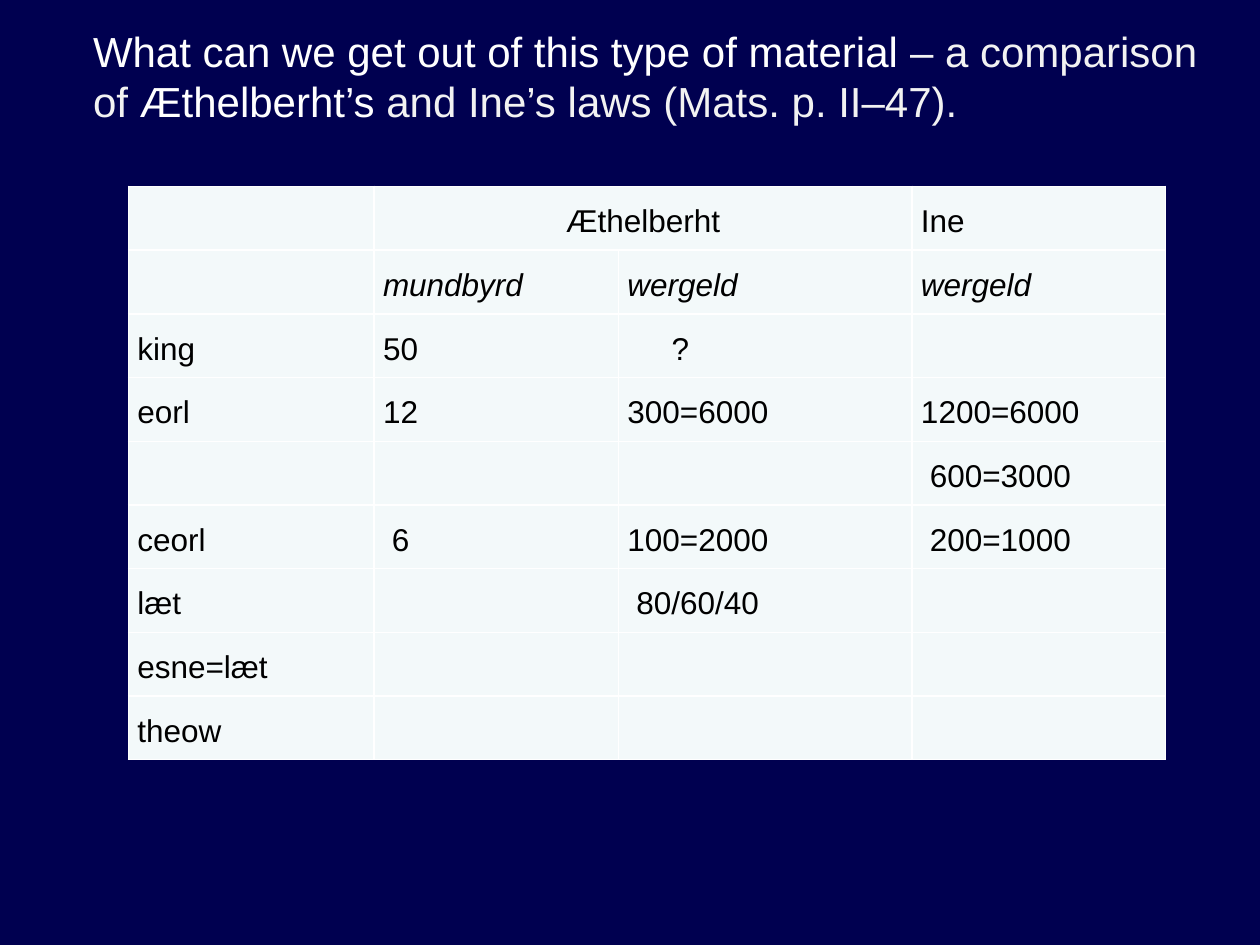
from lxml import etree
from pptx import Presentation
from pptx.dml.color import RGBColor
from pptx.enum.text import MSO_ANCHOR, PP_ALIGN
from pptx.oxml.ns import qn
from pptx.util import Inches, Pt

NAVY = RGBColor(0x00, 0x00, 0x50)
WHITE = RGBColor(0xFF, 0xFF, 0xFF)
OFF_WHITE = RGBColor(0xF2, 0xF2, 0xF2)
BLACK = RGBColor(0x00, 0x00, 0x00)
PALE = RGBColor(0xF3, 0xF9, 0xFA)
FONT = "Arial"

TITLE_SPANS = [
    ("What can we get out of this type of material ", WHITE),
    ("– a comparison of ", OFF_WHITE),
    ("Æthelberht’s ", WHITE),
    ("and Ine’s laws (Mats. p. II–47).", OFF_WHITE),
]

COLUMN_WIDTHS = [1.95, 1.94, 2.33, 2.01]
ROW_HEIGHT = 4.55 / 9
CELL_INSET = 0.07
LAW_ROWS = [
    ["", "Æthelberht", "", "Ine"],
    ["", "mundbyrd", "wergeld", "wergeld"],
    ["king", "50", "?", ""],
    ["eorl", "12", "300=6000", "1200=6000"],
    ["", "", "", "600=3000"],
    ["ceorl", "6", "100=2000", "200=1000"],
    ["læt", "", "80/60/40", ""],
    ["esne=læt", "", "", ""],
    ["theow", "", "", ""],
]
# Extra left inset that lines shorter figures up with the longer ones
INDENTS = {"?": 0.35, "600=3000": 0.07, "6": 0.07, "200=1000": 0.07, "80/60/40": 0.07}


def add_title(page):
    box = page.shapes.add_textbox(Inches(0.64), Inches(0.12), Inches(9), Inches(0.77))
    frame = box.text_frame
    frame.word_wrap = True
    frame.vertical_anchor = MSO_ANCHOR.TOP
    frame.margin_top = Inches(0.08)
    frame.margin_bottom = 0
    para = frame.paragraphs[0]
    para.font.name = FONT
    para.font.size = Pt(24)
    for text, color in TITLE_SPANS:
        span = para.add_run()
        span.text = text
        span.font.color.rgb = color


def set_borders(cell, color, points):
    """Draw all four edges of a cell; edges must precede the fill in the XML."""
    properties = cell._tc.get_or_add_tcPr()
    for index, edge in enumerate(("a:lnL", "a:lnR", "a:lnT", "a:lnB")):
        line = etree.Element(qn(edge), w=str(Pt(points)))
        fill = etree.SubElement(line, qn("a:solidFill"))
        etree.SubElement(fill, qn("a:srgbClr"), val=str(color))
        properties.insert(index, line)


def fill_cell(cell, text, italic):
    cell.fill.solid()
    cell.fill.fore_color.rgb = PALE
    set_borders(cell, WHITE, 1)
    cell.margin_left = Inches(CELL_INSET + INDENTS.get(text, 0))
    cell.margin_right = Inches(CELL_INSET)
    cell.margin_top = cell.margin_bottom = 0
    cell.text = text
    para = cell.text_frame.paragraphs[0]
    para.line_spacing = 1.5
    para.font.name = FONT
    para.font.size = Pt(18)
    para.font.bold = False
    para.font.italic = italic
    para.font.color.rgb = BLACK


def add_law_table(page):
    table = page.shapes.add_table(
        len(LAW_ROWS), len(COLUMN_WIDTHS), Inches(1.02), Inches(1.48),
        Inches(sum(COLUMN_WIDTHS)), Inches(ROW_HEIGHT * len(LAW_ROWS)),
    ).table
    table.first_row = table.horz_banding = False
    for column, width in zip(table.columns, COLUMN_WIDTHS):
        column.width = Inches(width)
    for row_index, texts in enumerate(LAW_ROWS):
        table.rows[row_index].height = Inches(ROW_HEIGHT)
        for column_index, text in enumerate(texts):
            fill_cell(table.cell(row_index, column_index), text, italic=row_index == 1)
    heading = table.cell(0, 1)
    heading.merge(table.cell(0, 2))
    heading.text_frame.paragraphs[0].alignment = PP_ALIGN.CENTER


def main():
    deck = Presentation()
    deck.slide_width, deck.slide_height = Inches(10), Inches(7.5)
    page = deck.slides.add_slide(deck.slide_layouts[6])
    page.background.fill.solid()
    page.background.fill.fore_color.rgb = NAVY
    add_title(page)
    add_law_table(page)
    deck.save("out.pptx")


if __name__ == "__main__":
    main()
